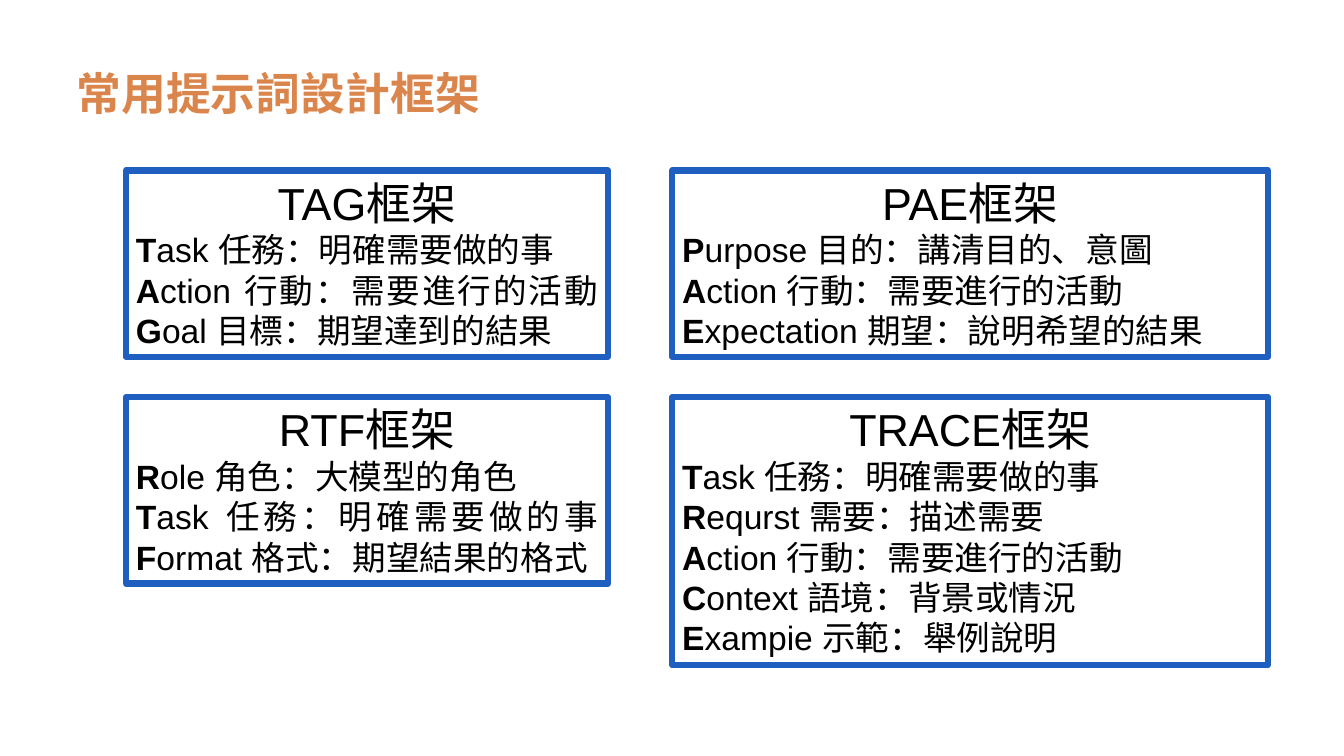
from pptx import Presentation
from pptx.dml.color import RGBColor
from pptx.enum.shapes import MSO_SHAPE
from pptx.enum.text import MSO_ANCHOR, MSO_AUTO_SIZE, PP_ALIGN
from pptx.util import Pt

RECTANGLE = MSO_SHAPE.RECTANGLE
TOP, BOTTOM = MSO_ANCHOR.TOP, MSO_ANCHOR.BOTTOM
GROW = MSO_AUTO_SIZE.SHAPE_TO_FIT_TEXT
LEFT, CENTER, JUSTIFY = PP_ALIGN.LEFT, PP_ALIGN.CENTER, PP_ALIGN.JUSTIFY

FONT = "Arial"
ORANGE, BLUE, BLACK = "DA854C", "1F5FBF", "000000"
HEADING_SIZE, BODY_SIZE = 32, 24


def color(hex_string):
    return RGBColor.from_string(hex_string)


def add_run(paragraph, text, size, bold=False, hex_string=BLACK):
    run = paragraph.add_run()
    run.text = text
    run.font.name = FONT
    run.font.size = Pt(size)
    run.font.bold = bold
    run.font.color.rgb = color(hex_string)


presentation = Presentation()
presentation.slide_width = Pt(960)
presentation.slide_height = Pt(540)
slide = presentation.slides.add_slide(presentation.slide_layouts[6])

# Title
title = slide.shapes.add_textbox(Pt(54.7), Pt(28), Pt(388), Pt(57))
title_frame = title.text_frame
title_frame.word_wrap = True
title_frame.vertical_anchor = BOTTOM
title_frame.margin_left = title_frame.margin_right = 0
title_frame.margin_top = title_frame.margin_bottom = 0
title_frame.paragraphs[0].alignment = LEFT
add_run(title_frame.paragraphs[0], "常用提示詞設計框架", HEADING_SIZE, True, ORANGE)

# Framework boxes: column (left, width), row top, height, name, and paragraphs
# of terms; the first letter of each term is bold
LEFT_COLUMN, RIGHT_COLUMN = (90, 344.2), (480.2, 425.5)
UPPER_ROW, LOWER_ROW = 121.7, 283.7
SHORT_BOX, TALL_BOX = 133.2, 191.5

frameworks = [
    (LEFT_COLUMN, UPPER_ROW, SHORT_BOX, "TAG框架", [
        ["Task 任務：明確需要做的事"],
        ["Action 行動：需要進行的活動", "Goal 目標：期望達到的結果"],
    ]),
    (RIGHT_COLUMN, UPPER_ROW, SHORT_BOX, "PAE框架", [
        ["Purpose 目的：講清目的、意圖"],
        ["Action 行動：需要進行的活動"],
        ["Expectation 期望：說明希望的結果"],
    ]),
    (LEFT_COLUMN, LOWER_ROW, SHORT_BOX, "RTF框架", [
        ["Role 角色：大模型的角色"],
        ["Task 任務：明確需要做的事", "Format 格式：期望結果的格式"],
    ]),
    (RIGHT_COLUMN, LOWER_ROW, TALL_BOX, "TRACE框架", [
        ["Task 任務：明確需要做的事"],
        ["Requrst 需要：描述需要"],
        ["Action 行動：需要進行的活動"],
        ["Context 語境：背景或情況"],
        ["Exampie 示範：舉例說明"],
    ]),
]

for (left, width), top, height, name, term_paragraphs in frameworks:
    box = slide.shapes.add_shape(RECTANGLE, Pt(left), Pt(top), Pt(width), Pt(height))
    box.shadow.inherit = False
    box.fill.background()
    box.line.color.rgb = color(BLUE)
    box.line.width = Pt(4.5)

    frame = box.text_frame
    frame.word_wrap = True
    frame.auto_size = GROW
    frame.vertical_anchor = TOP

    heading = frame.paragraphs[0]
    heading.alignment = CENTER
    add_run(heading, name, HEADING_SIZE)

    for terms in term_paragraphs:
        paragraph = frame.add_paragraph()
        paragraph.alignment = JUSTIFY
        for term in terms:
            add_run(paragraph, term[0], BODY_SIZE, True)
            add_run(paragraph, term[1:], BODY_SIZE)

presentation.save("out.pptx")
